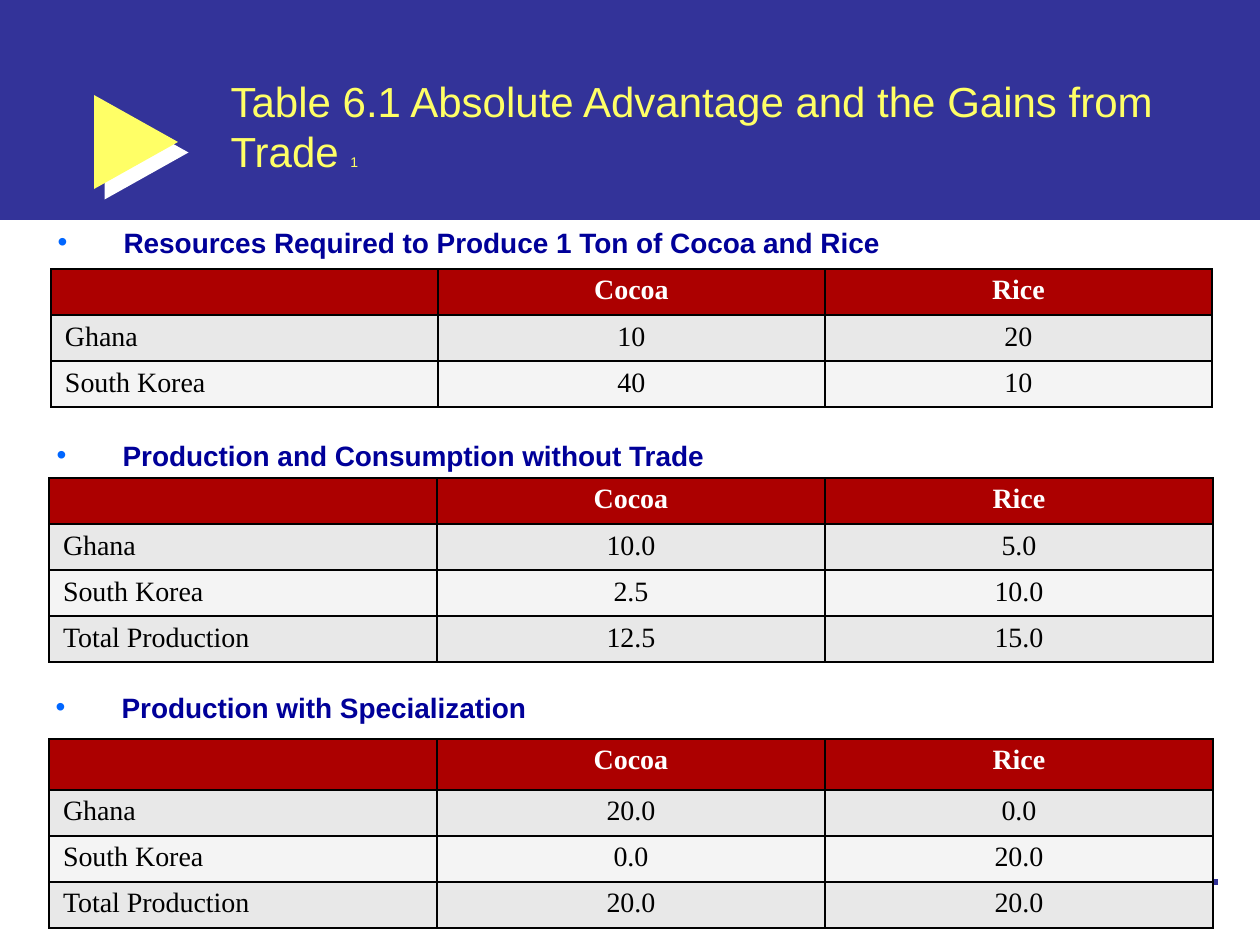
from dataclasses import dataclass

from lxml import etree
from pptx import Presentation
from pptx import util as u
from pptx.dml.color import RGBColor
from pptx.enum import shapes, text
from pptx.oxml import parse_xml
from pptx.oxml.ns import nsdecls, qn

PX_PER_INCH = 126
BAND, YELLOW, WHITE, BLACK = "333399", "FFFF66", "FFFFFF", "000000"
HEADING, BULLET, HEADER = "000099", "0066FF", "AC0000"
STRIPES = ("E8E8E8", "F4F4F4")
ROW_HEIGHT = 46


@dataclass
class Section:
    heading: str
    heading_box: tuple[int, int, int, int]
    table_left: int
    table_top: int
    column_width: int
    header_height: int
    rows: list[tuple[str, str, str]]


SECTIONS = [
    Section("Resources Required to Produce 1 Ton of Cocoa and Rice",
            (45, 219, 1166, 53), 51, 269, 387, ROW_HEIGHT,
            [("Ghana", "10", "20"), ("South Korea", "40", "10")]),
    Section("Production and Consumption without Trade",
            (44, 432, 1163, 57), 49, 478, 388, ROW_HEIGHT,
            [("Ghana", "10.0", "5.0"), ("South Korea", "2.5", "10.0"),
             ("Total Production", "12.5", "15.0")]),
    Section("Production with Specialization",
            (43, 684, 869, 49), 49, 739, 388, 51,
            [("Ghana", "20.0", "0.0"), ("South Korea", "0.0", "20.0"),
             ("Total Production", "20.0", "20.0")]),
]


def px(length: int) -> int:
    return u.Inches(length / PX_PER_INCH)


def color(value: str) -> RGBColor:
    return RGBColor.from_string(value)


def assign(target, values: dict) -> None:
    for name, value in values.items():
        setattr(target, name, value)


def place(shape, left: int, top: int, width: int, height: int) -> None:
    assign(shape, {"left": px(left), "top": px(top),
                   "width": px(width), "height": px(height)})


def add_span(para, words: str, size: int, face: str, shade: str, bold: bool = False) -> None:
    span = para.add_run()
    span.text = words
    assign(span.font, {"size": u.Pt(size), "name": face, "bold": bold})
    span.font.color.rgb = color(shade)


def add_filled(page, kind, box: tuple[int, int, int, int], shade: str):
    shape = page.shapes.add_shape(kind, *map(px, box))
    shape.shadow.inherit = False
    shape.fill.solid()
    shape.fill.fore_color.rgb = color(shade)
    shape.line.fill.background()
    return shape


def add_backdrop(page) -> None:
    """Draw the band, the marker and the footer rule behind everything else."""
    band = add_filled(page, shapes.MSO_SHAPE.RECTANGLE, (0, 0, 1260, 220), BAND)

    marker = add_filled(page, shapes.MSO_SHAPE.RIGHT_ARROW, (94, 95, 84, 94), YELLOW)
    marker.adjustments[0], marker.adjustments[1] = 0.384, 1
    effects = marker._element.spPr.find(qn("a:effectLst"))
    effects.append(parse_xml(
        f'<a:outerShdw {nsdecls("a")} dist="{u.Pt(8.5)}" dir="2700000" algn="ctr" '
        f'rotWithShape="0"><a:srgbClr val="{WHITE}"/></a:outerShdw>'))

    rule = page.shapes.add_connector(
        shapes.MSO_CONNECTOR.STRAIGHT, px(73), px(882), px(1218), px(882))
    rule.line.color.rgb = color(BAND)
    rule.line.width = u.Pt(3)
    etree.SubElement(rule._element.spPr, qn("a:effectLst"))

    tree = page.shapes._spTree
    for position, shape in enumerate((band, marker, rule), start=2):
        tree.insert(position, shape._element)


def fill_title(title) -> None:
    place(title, 218, 57, 989, 137)
    assign(title.text_frame, {"word_wrap": True, "auto_size": text.MSO_AUTO_SIZE.NONE,
                              "vertical_anchor": text.MSO_ANCHOR.MIDDLE})
    para = title.text_frame.paragraphs[0]
    para.alignment = text.PP_ALIGN.LEFT
    add_span(para, "Table 6.1 Absolute Advantage and the Gains from Trade ", 24, "Arial", YELLOW)
    add_span(para, "1", 8, "Arial", YELLOW)


def fill_heading(body, section: Section) -> None:
    place(body, *section.heading_box)
    assign(body.text_frame, {"word_wrap": True, "auto_size": text.MSO_AUTO_SIZE.NONE,
                             "vertical_anchor": text.MSO_ANCHOR.TOP})
    para = body.text_frame.paragraphs[0]
    props = para._p.get_or_add_pPr()
    assign(para, {"space_before": u.Pt(0), "alignment": text.PP_ALIGN.LEFT})
    props.set("marL", str(px(66)))
    props.set("indent", str(-px(66)))
    for bullet in (f'<a:buClr {nsdecls("a")}><a:srgbClr val="{BULLET}"/></a:buClr>',
                   f'<a:buFont {nsdecls("a")} typeface="Arial"/>',
                   f'<a:buChar {nsdecls("a")} char="•"/>'):
        props.append(parse_xml(bullet))
    add_span(para, section.heading, 16, "Arial", HEADING, True)


def add_borders(cell) -> None:
    props = cell._tc.get_or_add_tcPr()
    for position, side in enumerate("LRTB"):
        props.insert(position, parse_xml(
            f'<a:ln{side} {nsdecls("a")} w="{u.Pt(1)}"><a:solidFill>'
            f'<a:srgbClr val="{BLACK}"/></a:solidFill></a:ln{side}>'))


def fill_cell(cell, words: str, row: int, column: int) -> None:
    is_header = row == 0
    cell.fill.solid()
    cell.fill.fore_color.rgb = color(HEADER if is_header else STRIPES[(row - 1) % 2])
    assign(cell, {"margin_left": px(14), "margin_right": px(14),
                  "margin_top": px(6), "margin_bottom": px(6)})
    add_borders(cell)
    para = cell.text_frame.paragraphs[0]
    para.alignment = text.PP_ALIGN.CENTER if column else text.PP_ALIGN.LEFT
    if words:
        add_span(para, words, 16, "Times New Roman", WHITE if is_header else BLACK, is_header)
    else:
        etree.SubElement(para._p, qn("a:endParaRPr"), sz="1600")


def add_section_table(page, section: Section) -> None:
    rows = [("", "Cocoa", "Rice"), *section.rows]
    heights = [section.header_height] + [ROW_HEIGHT] * len(section.rows)
    columns = len(rows[0])
    table = page.shapes.add_table(
        len(rows), columns, px(section.table_left), px(section.table_top),
        px(section.column_width * columns), px(sum(heights))).table
    for column in table.columns:
        column.width = px(section.column_width)
    for r, (values, height) in enumerate(zip(rows, heights)):
        table.rows[r].height = px(height)
        for c, words in enumerate(values):
            fill_cell(table.cell(r, c), words, r, c)


def main() -> None:
    deck = Presentation()
    deck.slide_width, deck.slide_height = px(1260), px(945)
    page = deck.slides.add_slide(deck.slide_layouts.get_by_name("Comparison"))
    title, *bodies = page.placeholders
    add_backdrop(page)
    fill_title(title)
    for body, section in zip(bodies, SECTIONS):
        fill_heading(body, section)
        add_section_table(page, section)
    for spare in bodies[len(SECTIONS):]:
        spare._element.getparent().remove(spare._element)
    deck.save("out.pptx")


if __name__ == "__main__":
    main()
